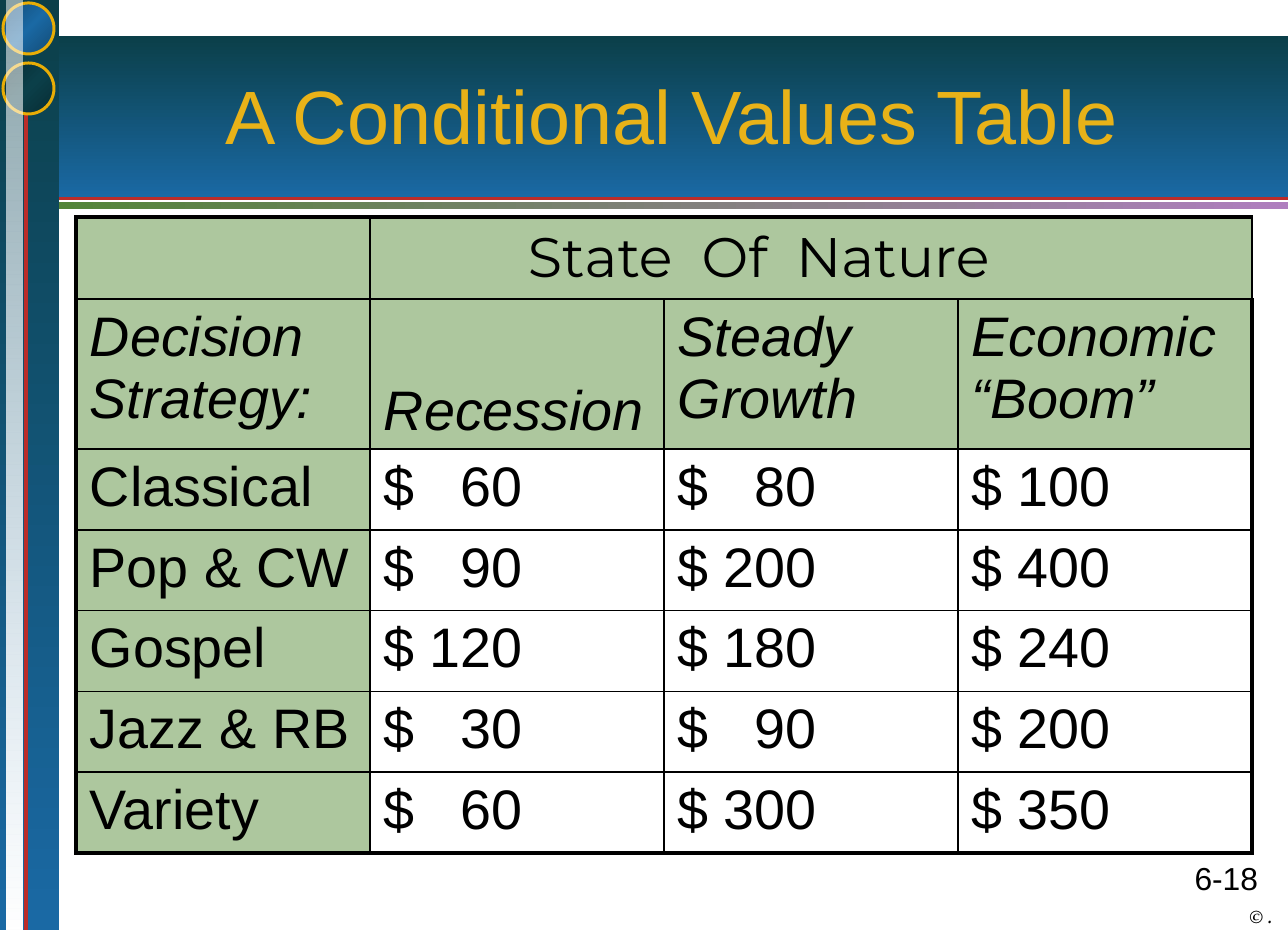
"""Build the slide with the conditional values table."""
from pptx import Presentation
from pptx.dml.color import RGBColor
from pptx.enum.shapes import MSO_CONNECTOR, MSO_SHAPE
from pptx.enum.text import MSO_ANCHOR, PP_ALIGN
from pptx.oxml import parse_xml
from pptx.oxml.ns import nsdecls
from pptx.util import Inches, Pt

PX = 6390
NAVY, BLUE = RGBColor(0x0B, 0x3F, 0x49), RGBColor(0x1A, 0x69, 0xA4)
DARK_NAVY, DARK_BLUE = RGBColor(0x08, 0x2D, 0x34), RGBColor(0x13, 0x4B, 0x75)
GREEN, PURPLE = RGBColor(0x53, 0x84, 0x38), RGBColor(0xAF, 0x7E, 0xBE)
GOLD, TITLE_GOLD = RGBColor(0xE8, 0xAD, 0x06), RGBColor(0xE8, 0xB2, 0x18)
RED, SAGE = RGBColor(0xBB, 0x2C, 0x29), RGBColor(0xAD, 0xC7, 0x9E)
WHITE, BLACK = RGBColor(0xFF, 0xFF, 0xFF), RGBColor(0, 0, 0)

STATES = ["Recession", "Steady Growth", "Economic “Boom”"]
PAYOFFS = {
    "Classical": [60, 80, 100],
    "Pop & CW": [90, 200, 400],
    "Gospel": [120, 180, 240],
    "Jazz & RB": [30, 90, 200],
    "Variety": [60, 300, 350],
}


def px(*lengths):
    """Turn pixel lengths into EMU."""
    return [n * PX for n in lengths]


def write(tf, text, size=28, font="Arial", color=BLACK, bold=False, italic=False,
          align=PP_ALIGN.LEFT, shadow=False):
    """Fill a text frame with one formatted run and return its paragraph."""
    p = tf.paragraphs[0]
    p.alignment = align
    r = p.add_run()
    r.text = text
    f = r.font
    f.size, f.name, f.bold, f.italic = Pt(size), font, bold, italic
    f.color.rgb = color
    if shadow:
        f.fill._xPr.find("{*}solidFill").addnext(parse_xml(
            f'<a:effectLst {nsdecls("a")}><a:outerShdw dist="35921" dir="2700000">'
            '<a:srgbClr val="000000"/></a:outerShdw></a:effectLst>'))
    return p


def add_text(s, box, text, margins=(13, 6, 13, 6), anchor=MSO_ANCHOR.TOP, wrap=True, **style):
    """Add a text box with pixel margins."""
    tf = s.shapes.add_textbox(*px(*box)).text_frame
    tf.word_wrap, tf.vertical_anchor = wrap, anchor
    tf.margin_left, tf.margin_top, tf.margin_right, tf.margin_bottom = px(*margins)
    write(tf, text, **style)


def add_gradient(s, kind, box, colors, angle, line=None, start_alpha=100):
    """Add a shape filled with evenly spaced gradient stops."""
    sp = s.shapes.add_shape(kind, *px(*box))
    sp.shadow.inherit = False
    sp.fill.background()
    stops = ""
    for i, color in enumerate(colors):
        alpha = 100 if i else start_alpha
        stops += (f'<a:gs pos="{i * 100000 // (len(colors) - 1)}"><a:srgbClr val="{color}">'
                  f'<a:alpha val="{alpha * 1000}"/></a:srgbClr></a:gs>')
    spPr = sp._element.spPr
    spPr.replace(spPr.find("{*}noFill"), parse_xml(
        f'<a:gradFill {nsdecls("a")} rotWithShape="1"><a:gsLst>{stops}</a:gsLst>'
        f'<a:lin ang="{angle * 60000}" scaled="0"/></a:gradFill>'))
    if line is None:
        sp.line.fill.background()
    else:
        sp.line.color.rgb, sp.line.width = line, Pt(1.5)


def add_line(s, ends, width):
    """Add a red rule between two points."""
    c = s.shapes.add_connector(MSO_CONNECTOR.STRAIGHT, *px(*ends))
    c.line.color.rgb, c.line.width = RED, Pt(width)
    c._element.spPr.append(parse_xml(f'<a:effectLst {nsdecls("a")}/>'))


def add_header(s, box):
    """Draw the title band with the rules below it."""
    x, y, w, h = box
    add_gradient(s, MSO_SHAPE.RECTANGLE, box, [NAVY, BLUE], 90)
    add_gradient(s, MSO_SHAPE.RECTANGLE, (x, y + h + 4, w, 7), [GREEN, PURPLE], 0)
    add_line(s, (x, y + h + 1, x + w, y + h + 1), 1.5)
    add_text(s, (x, y + 1, w, h - 7), "A Conditional Values Table", anchor=MSO_ANCHOR.MIDDLE,
             size=38, color=TITLE_GOLD, align=PP_ALIGN.CENTER, shadow=True)


def add_rail(s, box):
    """Draw the side rail with its rings and light strip."""
    x, y, w, h = box
    add_gradient(s, MSO_SHAPE.RECTANGLE, box, [NAVY, BLUE], 90)
    add_line(s, (x + 26, y + 113, x + 26, y + h), 2.25)
    for top, edge, middle in ((63, DARK_NAVY, NAVY), (3, DARK_BLUE, BLUE)):
        add_gradient(s, MSO_SHAPE.OVAL, (x + 3, y + top, 51, 51),
                     [edge, middle, edge], 45, line=GOLD)
    add_gradient(s, MSO_SHAPE.RECTANGLE, (x + 7, y, 16, h), [WHITE, WHITE], 90, start_alpha=52)


def style_cell(cell, edges, color):
    """Set the four borders, the margins and the fill of a cell."""
    tcPr = cell._tc.get_or_add_tcPr()
    for side, outer in zip("LRTB", edges):
        width = Pt(2.25 if outer else 1)
        tcPr.append(parse_xml(
            f'<a:ln{side} {nsdecls("a")} w="{width}"><a:solidFill>'
            f'<a:srgbClr val="{BLACK}"/></a:solidFill></a:ln{side}>'))
    cell.margin_left, cell.margin_right, cell.margin_top, cell.margin_bottom = px(14, 14, 7, 7)
    cell.fill.solid()
    cell.fill.fore_color.rgb = color


def add_payoffs(s, box):
    """Place the table of payoffs by strategy and state of nature."""
    x, y, w, h = box
    rows = [["", "State  Of  Nature", "", ""], ["Decision Strategy:", *STATES]]
    rows += [[name, *(f"$\t{n}" for n in values)] for name, values in PAYOFFS.items()]
    n_rows, n_cols = len(rows), len(rows[0])
    heights = [82, 150] + [(h - 232) // len(PAYOFFS)] * len(PAYOFFS)
    t = s.shapes.add_table(n_rows, n_cols, *px(*box)).table
    t.first_row = t.horz_banding = False
    for col in t.columns:
        col.width = w // n_cols * PX
    for i, texts in enumerate(rows):
        t.rows[i].height = heights[i] * PX
        for j, text in enumerate(texts):
            cell = t.cell(i, j)
            style_cell(cell, (j == 0, j == n_cols - 1, i == 0, i == n_rows - 1),
                       SAGE if i < 2 or j == 0 else WHITE)
            if not text:
                continue
            p = write(cell.text_frame, text, italic=i == 1,
                      font="Arial" if i else "Montserrat")
            if "\t" in text:
                p._p.get_or_add_pPr().append(parse_xml(
                    f'<a:tabLst {nsdecls("a")}><a:tab pos="{138 * PX}" algn="r"/></a:tabLst>'))
    t.cell(0, 1).merge(t.cell(0, n_cols - 1))
    t.cell(0, 1).margin_left = 158 * PX
    t.cell(1, 1).vertical_anchor = MSO_ANCHOR.BOTTOM


def add_footer(s, box):
    """Place the page number and the copyright mark."""
    x, y, w, h = box
    add_text(s, (x, y, w, 53), "6-18", margins=(14, 9, 14, 7), size=16, align=PP_ALIGN.RIGHT)
    add_text(s, (x + 104, y + h - 21, 23, 21), "© .", margins=(0, 0, 0, 0), wrap=False,
             anchor=MSO_ANCHOR.BOTTOM, size=9, font="TeX Gyre Pagella", bold=True,
             italic=True, align=PP_ALIGN.RIGHT)


def main():
    """Build and save the slide."""
    prs = Presentation()
    prs.slide_width, prs.slide_height = Inches(9), Inches(6.5)
    s = prs.slides.add_slide(prs.slide_layouts[6])
    add_header(s, (56, 36, 1232, 162))
    add_rail(s, (0, 0, 59, 930))
    add_payoffs(s, (76, 217, 1176, 612))
    add_footer(s, (1145, 850, 127, 77))
    prs.save("out.pptx")


if __name__ == "__main__":
    main()
